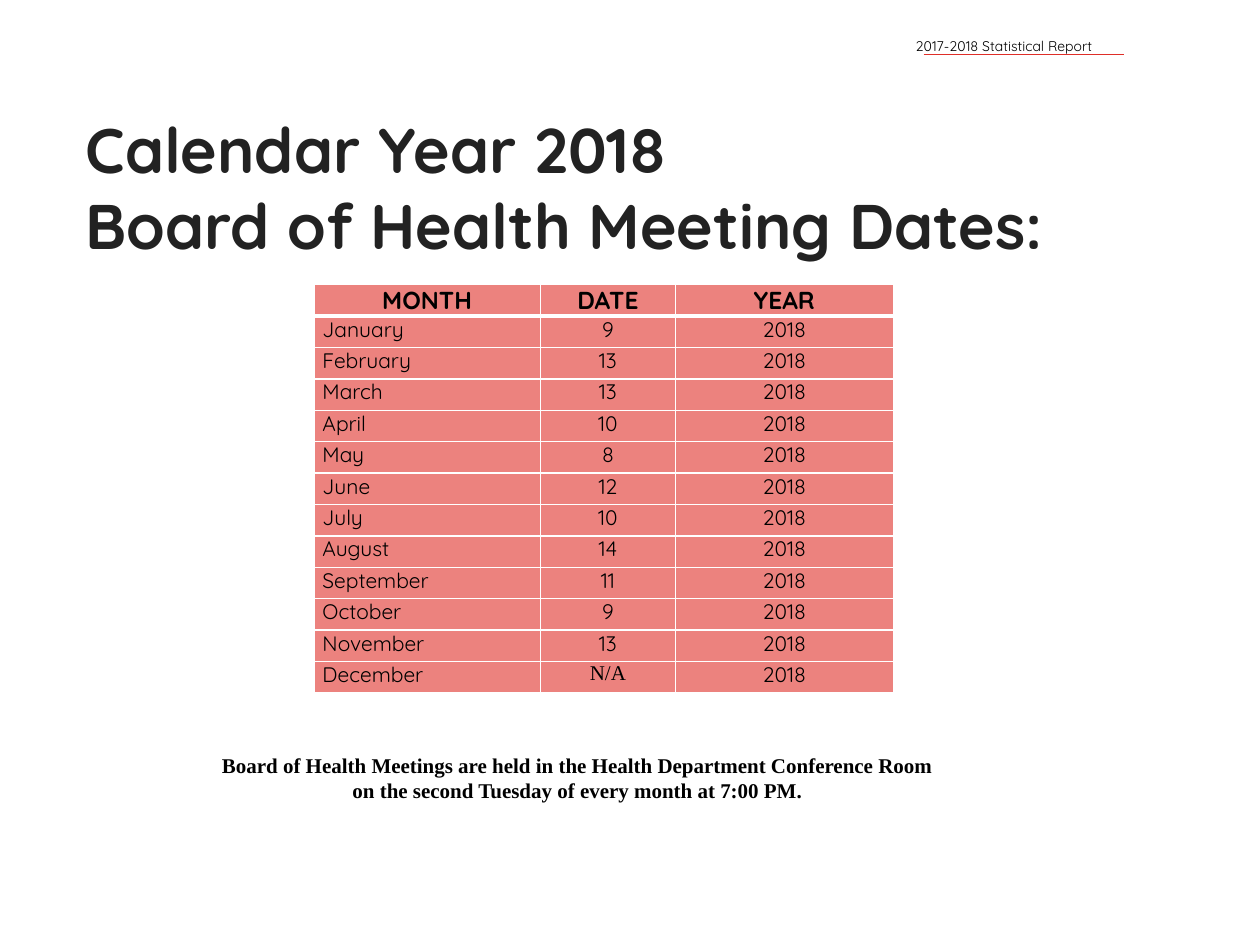
"""Build the slide of 2018 Board of Health meeting dates."""
from dataclasses import dataclass

from lxml import etree
from pptx import Presentation
from pptx.dml.color import RGBColor
from pptx.enum import shapes, text
from pptx.oxml.ns import qn
from pptx.util import Pt

HUES = {"ink": "000000", "title": "222222", "rule": "DF2E28",
        "cell": "EC827E", "edge": "FFFFFF"}
SANS, SERIF = "Quicksand", "Times New Roman"
LEFT, MID = text.PP_ALIGN.LEFT, text.PP_ALIGN.CENTER
HEADS = ("MONTH", "DATE", "YEAR")
DATES = {"January": "9", "February": "13", "March": "13", "April": "10",
         "May": "8", "June": "12", "July": "10", "August": "14",
         "September": "11", "October": "9", "November": "13",
         "December": "N/A"}
WIDTHS = (129.6, 77, 124.6)
ROW = 17.95


@dataclass
class Style:
    size: float
    face: str = SANS
    hue: str = "ink"
    bold: bool = False
    align: int = LEFT


@dataclass
class Box:
    left: float
    top: float
    width: float
    height: float

    def points(self) -> tuple:
        return tuple(map(Pt, (self.left, self.top, self.width, self.height)))


def color(hue: str) -> RGBColor:
    return RGBColor.from_string(HUES[hue])


def write(frame, words: str, style: Style) -> None:
    frame.text = words
    for para in frame.paragraphs:
        para.alignment = style.align
        for run in para.runs:
            font = run.font
            font.size, font.name, font.bold = Pt(style.size), style.face, style.bold
            font.color.rgb = color(style.hue)


def add_title(slide, words: str, box: Box, style: Style) -> None:
    title = slide.shapes.title
    title.left, title.top, title.width, title.height = box.points()
    frame = title.text_frame
    write(frame, words, style)
    frame.word_wrap = False
    frame.auto_size = text.MSO_AUTO_SIZE.NONE
    frame.vertical_anchor = text.MSO_ANCHOR.TOP


def add_note(slide, words: str, box: Box, style: Style, pad: float) -> None:
    frame = slide.shapes.add_textbox(*box.points()).text_frame
    frame.word_wrap = True
    frame.margin_left = frame.margin_right = Pt(pad)
    frame.margin_top = frame.margin_bottom = Pt(pad / 2)
    write(frame, words, style)


def add_rule(slide, left: float, right: float, top: float) -> None:
    line = slide.shapes.add_connector(
        shapes.MSO_CONNECTOR.STRAIGHT, Pt(left), Pt(top), Pt(right), Pt(top))
    line.line.color.rgb = color("rule")
    line.line.width = Pt(0.75)
    etree.SubElement(line._element.spPr, qn("a:effectLst"))


def add_edge(cell, side: str, width: float) -> None:
    props = cell._tc.get_or_add_tcPr()
    edge = etree.SubElement(props, qn(f"a:{side}"), w=str(Pt(width)))
    fill = etree.SubElement(edge, qn("a:solidFill"))
    etree.SubElement(fill, qn("a:srgbClr"), val=HUES["edge"])


def fill_cell(cell, words: str, style: Style, head: bool, below: bool) -> None:
    cell.margin_left = cell.margin_right = Pt(5)
    cell.margin_top = cell.margin_bottom = 0
    write(cell.text_frame, words, style)
    for side, width in (("lnL", 1), ("lnR", 1), ("lnT", 3 if below else 1),
                        ("lnB", 3 if head else 1)):
        add_edge(cell, side, width)
    cell.fill.solid()
    cell.fill.fore_color.rgb = color("cell")


def add_dates(slide, left: float, top: float) -> None:
    rows = [HEADS] + [(month, day, "2018") for month, day in DATES.items()]
    box = Box(left, top, sum(WIDTHS), ROW * len(rows))
    table = slide.shapes.add_table(len(rows), len(HEADS), *box.points()).table
    for col, width in zip(table.columns, WIDTHS):
        col.width = Pt(width)
    for i, row in enumerate(rows):
        for j, words in enumerate(row):
            head = i == 0
            style = Style(14 if head else 12, SERIF if words == "N/A" else SANS,
                          bold=head, align=MID if head or j else LEFT)
            fill_cell(table.cell(i, j), words, style, head, i == 1)


def main() -> None:
    deck = Presentation()
    deck.slide_width, deck.slide_height = Pt(720), Pt(540)
    slide = deck.slides.add_slide(deck.slide_layouts[5])
    add_dates(slide, 179.3, 162.7)
    add_note(slide, "Board of Health Meetings are held in the Health Department "
             "Conference Room on the second Tuesday of every month at 7:00 PM.",
             Box(126, 430, 408.2, 29),
             Style(12, SERIF, bold=True, align=MID), 0)
    add_title(slide, "Calendar Year 2018\vBoard of Health Meeting Dates:",
              Box(41.8, 59.8, 581, 97), Style(36, hue="title", bold=True))
    add_rule(slide, 527.8, 642.2, 31)
    add_note(slide, "2017-2018 Statistical Report",
             Box(516.2, 18, 149.8, 26.6), Style(8), 7.2)
    deck.save("out.pptx")


if __name__ == "__main__":
    main()
